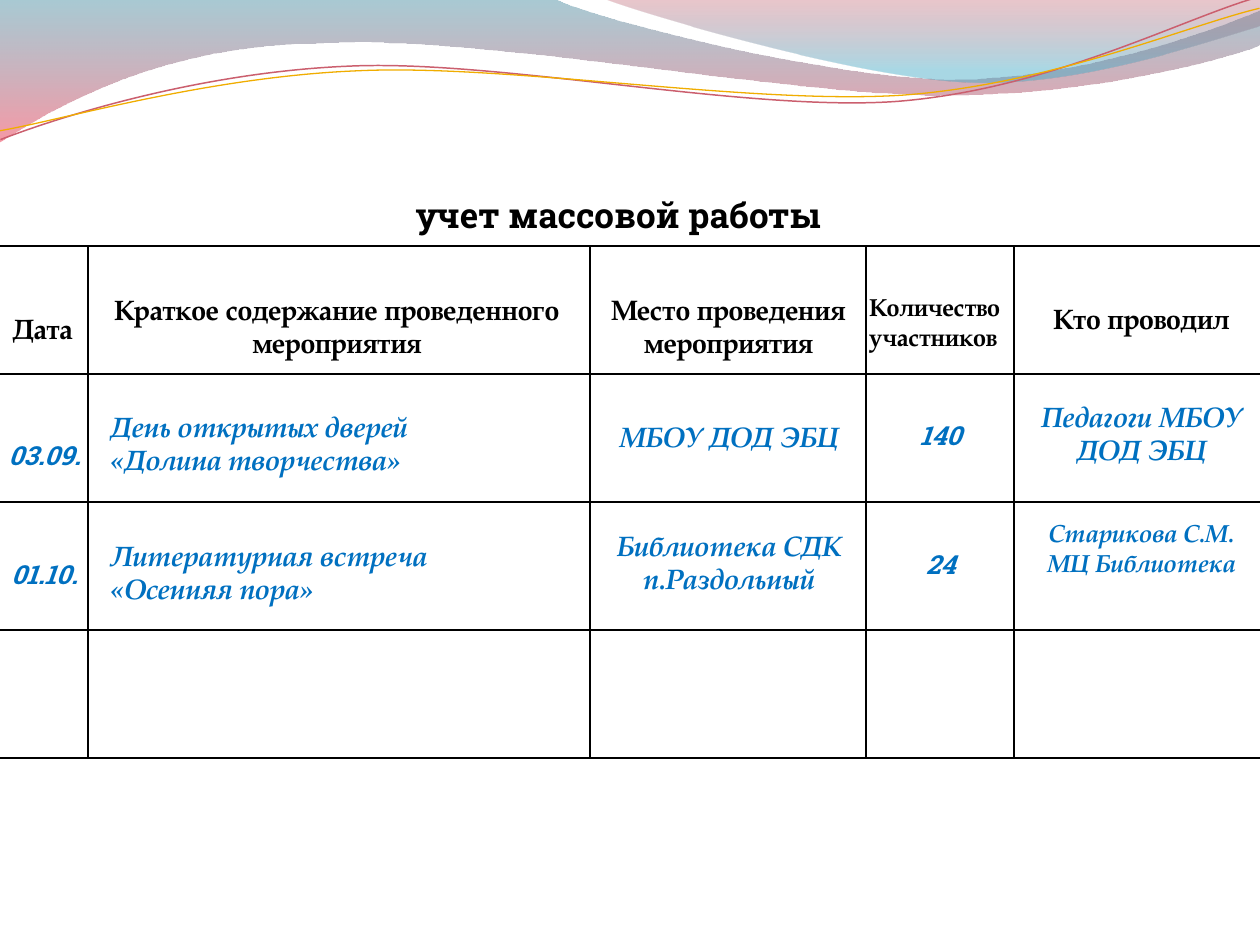
"""Builds a slide with a log of public events under a wavy header."""
from lxml import etree
from pptx import Presentation
from pptx import util as u
from pptx.dml.color import RGBColor
from pptx.enum import shapes, text
from pptx.oxml.ns import qn

BLACK = RGBColor(0x00, 0x00, 0x00)
BLUE = RGBColor(0x00, 0x70, 0xC0)
TEAL = RGBColor(0x3F, 0x8A, 0x9F)
CORAL = RGBColor(0xEF, 0x44, 0x5B)
WINE = RGBColor(0xB8, 0x42, 0x53)
AQUA = RGBColor(0x42, 0xAB, 0xC7)
ROSE = RGBColor(0xCB, 0x5F, 0x6E)
GOLD = RGBColor(0xF0, 0xAD, 0x00)

SERIF, SLAB = "TeX Gyre Pagella", "Roboto Slab"
LEFT, CENTER = text.PP_ALIGN.LEFT, text.PP_ALIGN.CENTER
WIDTH, HEIGHT = 1260, 945
SCALE = u.Inches(10) / WIDTH
RIBBON_TILT = -2.7

STYLES = {
    "title": {"name": SLAB, "size": u.Pt(20), "bold": True, "italic": False, "color": BLACK},
    "head": {"name": SERIF, "size": u.Pt(16), "bold": True, "italic": False, "color": BLACK},
    "small head": {"name": SERIF, "size": u.Pt(14), "bold": True, "italic": False, "color": BLACK},
    "number": {"name": SLAB, "size": u.Pt(15), "bold": True, "italic": True, "color": BLUE},
    "entry": {"name": SERIF, "size": u.Pt(16), "bold": True, "italic": True, "color": BLUE},
    "small entry": {"name": SERIF, "size": u.Pt(14), "bold": True, "italic": True, "color": BLUE},
}

TITLE = "учет массовой работы"
TITLE_BOX = (403, 187, 464, 55)

COLUMNS = [
    {"wrap": True, "cells": [
        ((0, 305, 98, 47), "head", LEFT, ["Дата"]),
        ((-20, 433, 129, 44), "number", CENTER, ["03.09."]),
        ((-20, 552, 129, 44), "number", CENTER, ["01.10."])]},
    {"wrap": False, "cells": [
        ((78, 286, 518, 81), "head", CENTER, ["Краткое содержание проведенного", "мероприятия"]),
        ((98, 403, 369, 81), "entry", LEFT, ["День открытых дверей", "«Долина творчества»"]),
        ((98, 532, 372, 81), "entry", LEFT, ["Литературная встреча", "«Осенняя пора»"])]},
    {"wrap": True, "cells": [
        ((581, 286, 295, 81), "head", CENTER, ["Место проведения", "мероприятия"]),
        ((601, 413, 256, 47), "entry", CENTER, ["МБОУ ДОД ЭБЦ"]),
        ((591, 522, 276, 81), "entry", CENTER, ["Библиотека СДК п.Раздольный"])]},
    {"wrap": True, "cells": [
        ((857, 286, 178, 72), "small head", LEFT, ["Количество", "участников"]),
        ((876, 413, 129, 44), "number", CENTER, ["140"]),
        ((876, 542, 129, 44), "number", CENTER, ["24"])]},
    {"wrap": True, "cells": [
        ((1023, 295, 237, 47), "head", CENTER, ["Кто проводил"]),
        ((1023, 393, 237, 115), "entry", CENTER, ["Педагоги МБОУ ДОД ЭБЦ"]),
        ((1023, 512, 237, 72), "small entry", CENTER, ["Старикова С.М.", "МЦ Библиотека"])]},
]

GRID_TOP, ROW_HEIGHT, ROW_COUNT = 246, 128, 4
COLUMN_EDGES = [88, 1014, 866, 590]

WAVES = [
    {"start": (0, -1), "stops": [(0, TEAL, 45), (1, CORAL, 55)], "segments": [
        [(554, -1)],
        [(600, 21), (837, 79), (955, 79)],
        [(1075, 79), (1207, 33), (1260, 11)],
        [(1261, 45)],
        [(1239, 55), (1096, 96), (940, 95)],
        [(784, 95), (481, 35), (324, 43)],
        [(163, 44), (58, 105), (-1, 142)]]},
    {"start": (604, -1), "stops": [(0, WINE, 30), (0.8, AQUA, 45)], "segments": [
        [(641, 14), (859, 78), (969, 82)],
        [(1079, 87), (1211, 40), (1260, 26)],
        [(1260, 0)]]},
]
RIBBONS = [
    {"start": (-2, 110), "color": ROSE, "width": 0.85, "segments": [
        [(58, 90), (200, 52), (350, 53)],
        [(499, 53), (745, 118), (896, 114)],
        [(1049, 109), (1184, 45), (1260, 27)]]},
    {"start": (-2, 101), "color": GOLD, "width": 0.75, "segments": [
        [(57, 94), (207, 57), (358, 58)],
        [(509, 58), (750, 111), (902, 108)],
        [(1052, 104), (1188, 52), (1262, 38)]]},
]


def px(*lengths):
    return [u.Emu(round(length * SCALE)) for length in lengths]


def add_outline(slide, start, segments, close):
    builder = slide.shapes.build_freeform(*px(*start), scale=1.0)
    builder.add_line_segments([px(*point) for segment in segments for point in segment],
                              close=close)
    outline = builder.convert_to_shape()
    outline.shadow.inherit = False
    steps = iter(list(outline.element.iter(qn("a:lnTo"))))
    for segment in segments:
        nodes = [next(steps) for _ in segment]
        if len(nodes) == 3:
            curve = etree.Element(qn("a:cubicBezTo"))
            nodes[0].addprevious(curve)
            for node in nodes:
                curve.append(node[0])
                node.getparent().remove(node)
    return outline


def add_wave(slide, start, segments, stops):
    wave = add_outline(slide, start, segments, True)
    wave.line.fill.background()
    wave.fill.gradient()
    wave.fill.gradient_angle = 270
    for stop, (position, color, _) in zip(wave.fill.gradient_stops, stops):
        stop.position = position
        stop.color.rgb = color
    gradient = wave.element.spPr.find(qn("a:gradFill"))
    for color, (_, _, opacity) in zip(gradient.iter(qn("a:srgbClr")), stops):
        etree.SubElement(color, qn("a:alpha"), val=str(opacity * 1000))


def add_ribbon(slide, start, segments, color, width):
    ribbon = add_outline(slide, start, segments, False)
    ribbon.rotation = RIBBON_TILT
    ribbon.fill.background()
    ribbon.line.color.rgb = color
    ribbon.line.width = u.Pt(width)


def add_rule(slide, *ends):
    rule = slide.shapes.add_connector(shapes.MSO_CONNECTOR.STRAIGHT, *px(*ends))
    rule.line.color.rgb = BLACK
    rule.line.width = u.Pt(0.75)
    etree.SubElement(rule.element.spPr, qn("a:effectLst"))


def write(frame, lines, style, align, wrap):
    layout = {"word_wrap": wrap, "auto_size": text.MSO_AUTO_SIZE.SHAPE_TO_FIT_TEXT,
              "vertical_anchor": text.MSO_ANCHOR.TOP}
    for key, value in layout.items():
        setattr(frame, key, value)
    frame.text = "\n".join(lines)
    for paragraph in frame.paragraphs:
        paragraph.alignment = align
        font = paragraph.runs[0].font
        for key, value in STYLES[style].items():
            if key == "color":
                font.color.rgb = value
            else:
                setattr(font, key, value)


def main():
    deck = Presentation()
    deck.slide_width, deck.slide_height = px(WIDTH, HEIGHT)
    slide = deck.slides.add_slide(deck.slide_layouts[5])

    for wave in WAVES:
        add_wave(slide, **wave)
    for ribbon in RIBBONS:
        add_ribbon(slide, **ribbon)

    title = slide.shapes.title
    title.left, title.top, title.width, title.height = px(*TITLE_BOX)
    write(title.text_frame, [TITLE], "title", LEFT, False)

    for row in range(ROW_COUNT + 1):
        y = GRID_TOP + row * ROW_HEIGHT
        add_rule(slide, 0, y, WIDTH, y)
    for x in COLUMN_EDGES:
        add_rule(slide, x, GRID_TOP, x, GRID_TOP + ROW_COUNT * ROW_HEIGHT)

    for column in COLUMNS:
        for box, style, align, lines in column["cells"]:
            cell = slide.shapes.add_textbox(*px(*box))
            write(cell.text_frame, lines, style, align, column["wrap"])

    deck.save("out.pptx")


if __name__ == "__main__":
    main()
